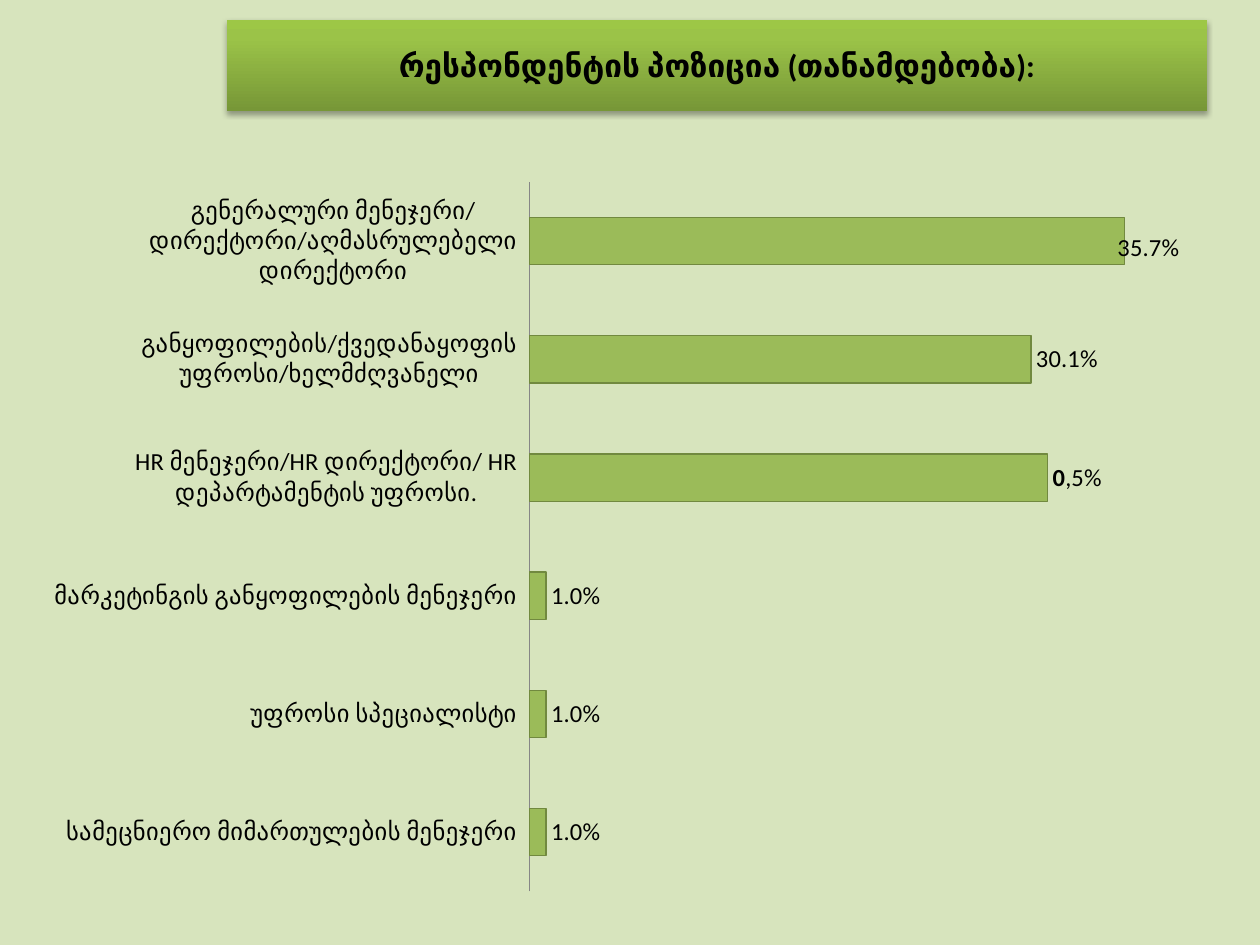
from lxml import etree
from pptx import Presentation
from pptx.chart.data import CategoryChartData
from pptx.dml.color import RGBColor
from pptx.enum.chart import XL_CHART_TYPE, XL_LABEL_POSITION, XL_TICK_LABEL_POSITION, XL_TICK_MARK
from pptx.enum.shapes import MSO_SHAPE
from pptx.enum.text import MSO_ANCHOR, PP_ALIGN
from pptx.oxml import parse_xml
from pptx.oxml.ns import nsdecls, qn
from pptx.util import Inches, Pt

BAR_CLUSTERED = XL_CHART_TYPE.BAR_CLUSTERED
OUTSIDE_END = XL_LABEL_POSITION.OUTSIDE_END
LOW = XL_TICK_LABEL_POSITION.LOW
NO_TICK = XL_TICK_MARK.NONE
RECTANGLE = MSO_SHAPE.RECTANGLE
MIDDLE = MSO_ANCHOR.MIDDLE
CENTER = PP_ALIGN.CENTER

COLORS = {
    "background": "D7E4BD",
    "text": "000000",
    "banner_bottom": "779737",
    "banner_middle": "9BC348",
    "banner_top": "9DC746",
    "bar": "9BBB59",
    "bar_edge": "71893F",
    "axis": "868686",
}
FONT = "Calibri"
PERCENT = "###0.0%"
WIDTH, HEIGHT = Inches(10), Inches(7.5)
BANNER_BOX = (0.18, 0.021, 0.778, 0.096)
CHART_BOX = (0.031, 0.177, 0.938, 0.782)
PLOT_AREA = {"x": 0.415, "y": 0.02, "w": 0.564, "h": 0.96}

POSITIONS = [
    ("სამეცნიერო მიმართულების მენეჯერი", 0.01),
    ("უფროსი სპეციალისტი", 0.01),
    ("მარკეტინგის განყოფილების მენეჯერი", 0.01),
    ("HR მენეჯერი/HR დირექტორი/ HR დეპარტამენტის უფროსი.", 0.311),
    ("განყოფილების/ქვედანაყოფის უფროსი/ხელმძღვანელი", 0.301),
    ("გენერალური მენეჯერი/დირექტორი/აღმასრულებელი დირექტორი", 0.357),
]
HR_ROW, DIRECTOR_ROW = 3, 5


def color(name):
    return RGBColor.from_string(COLORS[name])


def place(box):
    x, y, w, h = box
    return int(x * WIDTH), int(y * HEIGHT), int(w * WIDTH), int(h * HEIGHT)


def style(font, size, bold=False):
    font.name = FONT
    font.size = Pt(size)
    font.bold = bold
    font.color.rgb = color("text")


def manual_layout(shares, inner=False):
    target = '<c:layoutTarget val="inner"/>' if inner else ""
    modes = '<c:xMode val="edge"/><c:yMode val="edge"/>' if inner else ""
    values = "".join(f'<c:{key} val="{share}"/>' for key, share in shares.items())
    return parse_xml(
        f'<c:layout {nsdecls("c")}><c:manualLayout>{target}{modes}{values}'
        "</c:manualLayout></c:layout>"
    )


def add_banner(slide, box):
    banner = slide.shapes.add_shape(RECTANGLE, *place(box))
    banner.line.fill.background()
    banner.fill.background()
    banner.shadow.inherit = False
    properties = banner.element.spPr

    stops = ((0, "banner_bottom"), (80, "banner_middle"), (100, "banner_top"))
    stop_list = "".join(
        f'<a:gs pos="{share * 1000}"><a:srgbClr val="{COLORS[name]}"/></a:gs>'
        for share, name in stops
    )
    gradient = parse_xml(
        f'<a:gradFill {nsdecls("a")} rotWithShape="1"><a:gsLst>{stop_list}</a:gsLst>'
        '<a:lin ang="16200000" scaled="0"/></a:gradFill>'
    )
    properties.replace(properties.find(qn("a:noFill")), gradient)

    shadow = etree.SubElement(
        properties.find(qn("a:effectLst")), qn("a:outerShdw"),
        blurRad=str(Pt(3.1)), dist=str(Pt(1.8)), dir="5400000", rotWithShape="0",
    )
    shade = etree.SubElement(shadow, qn("a:srgbClr"), val=COLORS["text"])
    etree.SubElement(shade, qn("a:alpha"), val="35000")

    frame = banner.text_frame
    frame.word_wrap = True
    frame.vertical_anchor = MIDDLE
    heading = frame.paragraphs[0]
    heading.alignment = CENTER
    run = heading.add_run()
    run.text = "რესპონდენტის პოზიცია (თანამდებობა):"
    style(run.font, 18, bold=True)


def add_position_chart(slide, box):
    data = CategoryChartData(number_format=PERCENT)
    data.categories = [position for position, _ in POSITIONS]
    data.add_series("Series 1", [share for _, share in POSITIONS])
    chart = slide.shapes.add_chart(BAR_CLUSTERED, *place(box), data).chart
    chart.has_legend = False
    chart.has_title = False
    style(chart.font, 14)

    plot_area = chart.element.chart.plotArea
    for automatic in plot_area.findall(qn("c:layout")):
        plot_area.remove(automatic)
    plot_area.insert(0, manual_layout(PLOT_AREA, inner=True))

    shares_axis = chart.value_axis
    shares_axis.minimum_scale, shares_axis.maximum_scale = 0, 0.4
    shares_axis.has_major_gridlines = False
    shares_axis.visible = False
    positions_axis = chart.category_axis
    positions_axis.major_tick_mark = NO_TICK
    positions_axis.minor_tick_mark = NO_TICK
    positions_axis.tick_label_position = LOW
    positions_axis.format.line.color.rgb = color("axis")
    positions_axis.format.line.width = Pt(0.75)

    plot = chart.plots[0]
    plot.gap_width = 150
    plot.vary_by_categories = False
    bars = plot.series[0]
    bars.format.fill.solid()
    bars.format.fill.fore_color.rgb = color("bar")
    bars.format.line.color.rgb = color("bar_edge")
    bars.format.line.width = Pt(0.75)

    labels = bars.data_labels
    labels.show_value = True
    labels.number_format = PERCENT
    labels.number_format_is_linked = False
    labels.position = OUTSIDE_END
    style(labels.font, 14)

    hr_label = bars.points[HR_ROW].data_label
    hr_text = hr_label.text_frame.paragraphs[0]
    for text, bold in (("0", True), (",5%", False)):
        run = hr_text.add_run()
        run.text = text
        style(run.font, 14, bold)
    hr_label.position = OUTSIDE_END

    director_label = bars.points[DIRECTOR_ROW].data_label
    style(director_label.font, 14)
    director_label.position = OUTSIDE_END
    label_index = labels._element.findall(f"{qn('c:dLbl')}/{qn('c:idx')}")[-1]
    label_index.addnext(manual_layout({"x": -0.01, "y": 0.01}))


def main():
    deck = Presentation()
    deck.slide_width, deck.slide_height = WIDTH, HEIGHT
    slide = deck.slides.add_slide(deck.slide_layouts[6])
    slide.background.fill.solid()
    slide.background.fill.fore_color.rgb = color("background")
    add_banner(slide, BANNER_BOX)
    add_position_chart(slide, CHART_BOX)
    deck.save("out.pptx")


if __name__ == "__main__":
    main()
